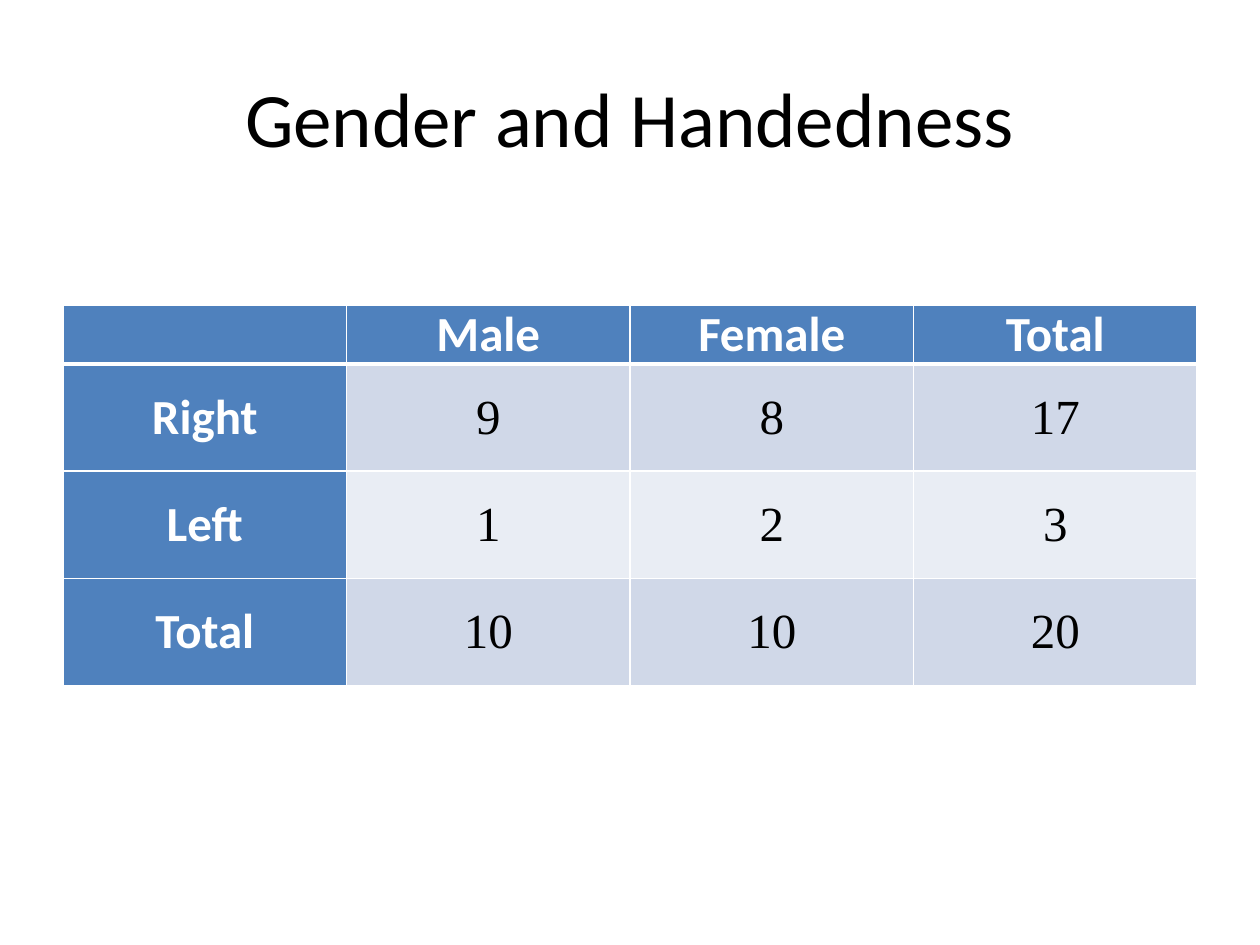
from dataclasses import dataclass

from lxml.etree import SubElement
from pptx import Presentation
from pptx.dml.color import RGBColor
from pptx.enum.text import MSO_ANCHOR, PP_ALIGN
from pptx.oxml.ns import qn
from pptx.util import Inches, Pt

BLACK = RGBColor(0x00, 0x00, 0x00)
WHITE = RGBColor(0xFF, 0xFF, 0xFF)
HEADER_BLUE = RGBColor(0x4F, 0x81, 0xBD)
BANDS = (RGBColor(0xD0, 0xD8, 0xE8), RGBColor(0xE9, 0xED, 0xF4))

COUNTS = (
    ("", "Male", "Female", "Total"),
    ("Right", "9", "8", "17"),
    ("Left", "1", "2", "3"),
    ("Total", "10", "10", "20"),
)
COLUMN_WIDTH = 2.25
ROW_HEIGHTS = (0.47, 0.85, 0.85, 0.85)
CELL_FORMAT = {
    "margin_left": Inches(0.07),
    "margin_right": Inches(0.07),
    "margin_top": 0,
    "margin_bottom": 0,
    "vertical_anchor": MSO_ANCHOR.MIDDLE,
}


@dataclass(frozen=True)
class TextStyle:
    name: str
    size: int
    color: RGBColor
    bold: bool = False


TITLE_STYLE = TextStyle("Calibri", 44, BLACK)
HEADER_STYLE = TextStyle("Calibri", 28, WHITE, bold=True)
COUNT_STYLE = TextStyle("Times New Roman", 28, BLACK)


def write_text(frame, text: str, style: TextStyle) -> None:
    para = frame.paragraphs[0]
    para.alignment = PP_ALIGN.CENTER
    span = para.add_run()
    span.text = text
    font_format = {"name": style.name, "size": Pt(style.size), "bold": style.bold}
    for attribute, value in font_format.items():
        setattr(span.font, attribute, value)
    span.font.color.rgb = style.color


def add_title(slide, text: str) -> None:
    box = slide.shapes.add_textbox(Inches(0.5), Inches(0.3), Inches(9), Inches(1.25))
    box.text_frame.word_wrap = True
    box.text_frame.vertical_anchor = MSO_ANCHOR.MIDDLE
    write_text(box.text_frame, text, TITLE_STYLE)


def add_borders(cell, widths: dict[str, int]) -> None:
    """Draw white borders; call before the fill, which must follow them in the XML."""
    properties = cell._tc.get_or_add_tcPr()
    for side, width in widths.items():
        line = SubElement(properties, qn(f"a:ln{side}"), w=str(Pt(width)))
        fill = SubElement(line, qn("a:solidFill"))
        SubElement(fill, qn("a:srgbClr"), val=str(WHITE))


def format_cell(cell, text: str, row: int, column: int) -> None:
    is_header = row == 0 or column == 0
    for attribute, value in CELL_FORMAT.items():
        setattr(cell, attribute, value)
    add_borders(cell, {
        "L": 1,
        "R": 1,
        "T": 3 if row == 1 else 1,
        "B": 3 if row == 0 else 1,
    })
    cell.fill.solid()
    cell.fill.fore_color.rgb = HEADER_BLUE if is_header else BANDS[(row - 1) % 2]
    if text:
        write_text(cell.text_frame, text, HEADER_STYLE if is_header else COUNT_STYLE)


def add_count_table(slide) -> None:
    column_count = len(COUNTS[0])
    table = slide.shapes.add_table(
        len(COUNTS), column_count, Inches(0.5), Inches(2.42),
        Inches(COLUMN_WIDTH * column_count), Inches(sum(ROW_HEIGHTS)),
    ).table
    for column in table.columns:
        column.width = Inches(COLUMN_WIDTH)
    for row, height in zip(table.rows, ROW_HEIGHTS):
        row.height = Inches(height)
    for row_index, texts in enumerate(COUNTS):
        for column_index, text in enumerate(texts):
            format_cell(table.cell(row_index, column_index), text, row_index, column_index)


def main() -> None:
    deck = Presentation()
    deck.slide_width, deck.slide_height = Inches(10), Inches(7.5)
    slide = deck.slides.add_slide(deck.slide_layouts[6])
    add_title(slide, "Gender and Handedness")
    add_count_table(slide)
    deck.save("out.pptx")


if __name__ == "__main__":
    main()
